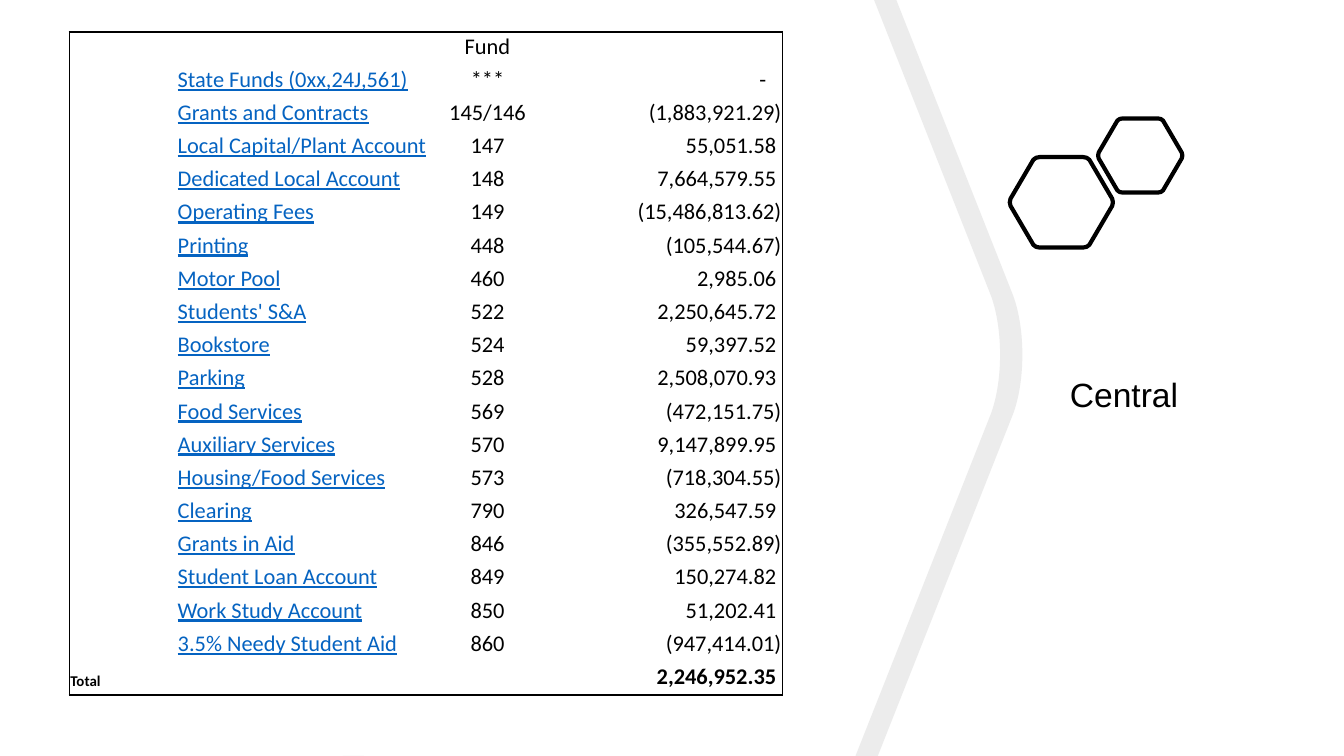
from lxml import etree
from pptx import Presentation
from pptx.dml.color import RGBColor
from pptx.enum.text import MSO_ANCHOR, PP_ALIGN
from pptx.oxml.ns import qn
from pptx.util import Cm, Pt

BLACK = RGBColor(0x00, 0x00, 0x00)
GRAY = RGBColor(0x80, 0x80, 0x80)
LINK_BLUE = RGBColor(0x05, 0x63, 0xC1)
LEFT, CENTER, RIGHT = PP_ALIGN.LEFT, PP_ALIGN.CENTER, PP_ALIGN.RIGHT
BOTTOM = MSO_ANCHOR.BOTTOM
NBSP = chr(160)
NO_STYLE = "{2D5ABB26-0587-4C30-8999-92F81FD0307C}"

SLIDE_W, SLIDE_H = 25.4, 14.29
COL_WIDTHS = (2.03, 4.9, 1.95, 4.6)
ROW_HEIGHT = 0.62

FUNDS = [
    ("State Funds (0xx,24J,561)", "***", 0),
    ("Grants and Contracts", "145/146", -1883921.29),
    ("Local Capital/Plant Account", "147", 55051.58),
    ("Dedicated Local Account", "148", 7664579.55),
    ("Operating Fees", "149", -15486813.62),
    ("Printing", "448", -105544.67),
    ("Motor Pool", "460", 2985.06),
    ("Students' S&A", "522", 2250645.72),
    ("Bookstore", "524", 59397.52),
    ("Parking", "528", 2508070.93),
    ("Food Services", "569", -472151.75),
    ("Auxiliary Services", "570", 9147899.95),
    ("Housing/Food Services", "573", -718304.55),
    ("Clearing", "790", 326547.59),
    ("Grants in Aid", "846", -355552.89),
    ("Student Loan Account", "849", 150274.82),
    ("Work Study Account", "850", 51202.41),
    ("3.5% Needy Student Aid", "860", -947414.01),
]
TOTAL = 2246952.35


def accounting(value):
    """Negative amounts in brackets, others padded to line up with them."""
    if value == 0:
        return "-" + NBSP * 3
    return f"({-value:,.2f})" if value < 0 else f"{value:,.2f}{NBSP}"


def add_outline(shapes, *contours):
    """Each contour lists segments: one point for a line, three for a curve."""
    emu = [[(Cm(x), Cm(y)) for seg in contour for x, y in seg] for contour in contours]
    builder = shapes.build_freeform(*emu[0][0])
    for i, points in enumerate(emu):
        if i:
            builder.move_to(*points[0])
        builder.add_line_segments(points[1:], close=True)
    sp = builder.convert_to_shape()
    sp.shadow.inherit = False

    # Join the three points of each curve into one Bezier segment
    outline = next(sp._element.iter(qn("a:path")))
    nodes = iter([node for node in outline if node.tag != qn("a:close")])
    for seg in (seg for contour in contours for seg in contour):
        parts = [next(nodes) for _ in seg]
        if len(parts) == 3:
            curve = etree.Element(qn("a:cubicBezTo"))
            parts[0].addprevious(curve)
            for part in parts:
                curve.append(part[0])
                outline.remove(part)
    return sp


def add_band(shapes):
    outer = [(16.94, 0), (19.15, 5.59), (19.38, 6.22),
             (19.38, 7.19), (19.15, 7.82), (16.59, SLIDE_H)]
    inner = [(x - 0.42, y) for x, y in reversed(outer)]
    band = [seg for edge in (outer, inner)
            for seg in (edge[:1], edge[1:2], edge[2:5], edge[5:])]
    sliver = [[(6.48, SLIDE_H)], [(6.88, SLIDE_H)]]
    sp = add_outline(shapes, band, sliver)
    sp.fill.solid()
    sp.fill.fore_color.rgb = GRAY
    color = sp.fill._xPr.find(".//" + qn("a:srgbClr"))
    etree.SubElement(color, qn("a:alpha"), val="15000")
    sp.line.fill.background()


def add_hexagon(shapes, left, top, width, height):
    # Rounded corners as fractions of the box, mirrored to the other sides
    side = [(0.01, 0.54), (0, 0.52), (0, 0.48), (0.01, 0.46)]
    corner = [(0.23, 0.03), (0.24, 0.01), (0.27, 0), (0.29, 0)]

    def flip_x(curve):
        return [(1 - x, y) for x, y in reversed(curve)]

    def flip_y(curve):
        return [(x, 1 - y) for x, y in reversed(curve)]

    curves = [side, corner, flip_x(corner), flip_x(side),
              flip_y(flip_x(corner)), flip_y(corner)]
    contour = []
    for curve in curves:
        points = [(left + x * width, top + y * height) for x, y in curve]
        contour += [points[:1], points[1:]]
    sp = add_outline(shapes, contour)
    sp.fill.background()
    sp.line.color.rgb = BLACK
    sp.line.width = Pt(2.25)


def add_run(p, text, size, font, color=BLACK, bold=False, underline=False):
    r = p.add_run()
    r.text = text
    r.font.size, r.font.name = Pt(size), font
    r.font.color.rgb = color
    r.font.bold, r.font.underline = bold, underline


def set_cell(cell, text, align, size=12, **style):
    cell.margin_left = cell.margin_right = cell.margin_top = Cm(0.02)
    cell.margin_bottom = Cm(0.09)
    cell.vertical_anchor = BOTTOM
    cell.fill.background()
    p = cell.text_frame.paragraphs[0]
    p.alignment = align
    if text:
        add_run(p, text, size, "Calibri", **style)
    else:
        etree.SubElement(p._p, qn("a:endParaRPr"), sz=str(size * 100))


def set_borders(cell, sides):
    tc_pr = cell._tc.get_or_add_tcPr()
    for i, side in enumerate(sides):
        ln = etree.Element(qn("a:ln" + side), w=str(Pt(1)))
        fill = etree.SubElement(ln, qn("a:solidFill"))
        etree.SubElement(fill, qn("a:srgbClr"), val=str(BLACK))
        tc_pr.insert(i, ln)


def add_fund_table(shapes):
    rows = [("", "", "Fund", "")]
    rows += [("", name, fund, accounting(amount)) for name, fund, amount in FUNDS]
    rows.append(("Total", "", "", accounting(TOTAL)))
    n_rows, n_cols = len(rows), len(COL_WIDTHS)
    table = shapes.add_table(n_rows, n_cols, Cm(1.31), Cm(0.6),
                             Cm(sum(COL_WIDTHS)), Cm(ROW_HEIGHT * n_rows)).table
    table.first_row = table.horz_banding = False
    table._tbl.tblPr.find(qn("a:tableStyleId")).text = NO_STYLE
    for col, width in zip(table.columns, COL_WIDTHS):
        col.width = Cm(width)

    for i, values in enumerate(rows):
        table.rows[i].height = Cm(ROW_HEIGHT)
        last = i == n_rows - 1
        for j, (text, align) in enumerate(zip(values, (LEFT, LEFT, CENTER, RIGHT))):
            cell = table.cell(i, j)
            is_link = j == 1
            set_cell(cell, text, align, size=8 if last and j == 0 else 12,
                     color=LINK_BLUE if is_link else BLACK,
                     underline=is_link, bold=last)
            # Frame around the whole table only
            edges = {"L": j == 0, "R": j == n_cols - 1, "T": i == 0, "B": last}
            set_borders(cell, [side for side, on in edges.items() if on])


def add_label(shapes, text):
    tf = shapes.add_textbox(Cm(19.97), Cm(6.95), Cm(4.11), Cm(1.02)).text_frame
    tf.word_wrap = True
    add_run(tf.paragraphs[0], text, 18, "Arial")


def main():
    prs = Presentation()
    prs.slide_width, prs.slide_height = Cm(SLIDE_W), Cm(SLIDE_H)
    shapes = prs.slides.add_slide(prs.slide_layouts[6]).shapes

    # Decoration
    add_band(shapes)
    hexagons = shapes.add_group_shape().shapes
    add_hexagon(hexagons, 19.08, 2.97, 1.96, 1.71)
    add_hexagon(hexagons, 20.75, 2.24, 1.6, 1.4)

    # Content
    add_fund_table(shapes)
    add_label(shapes, "Central")

    prs.save("out.pptx")


if __name__ == "__main__":
    main()
